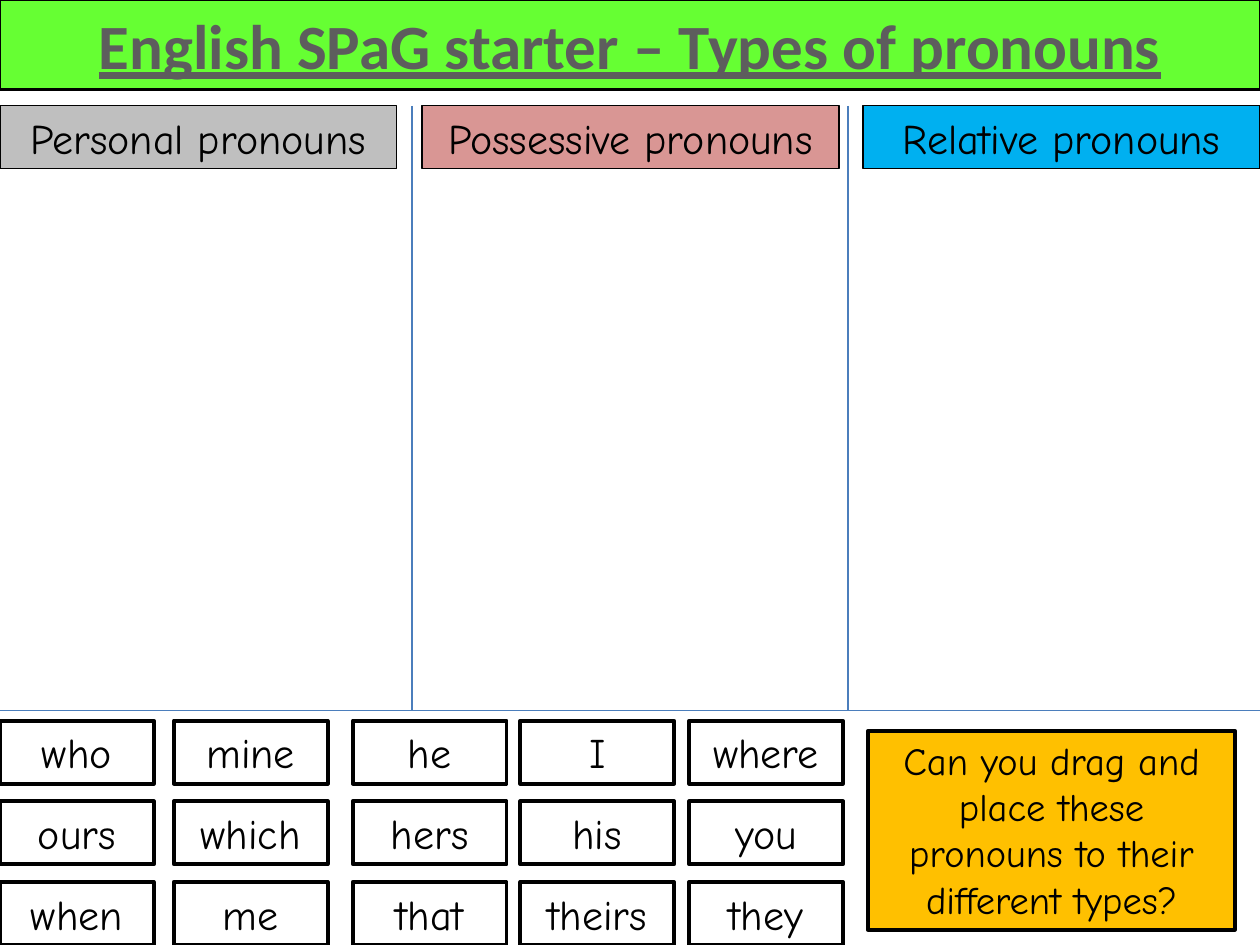
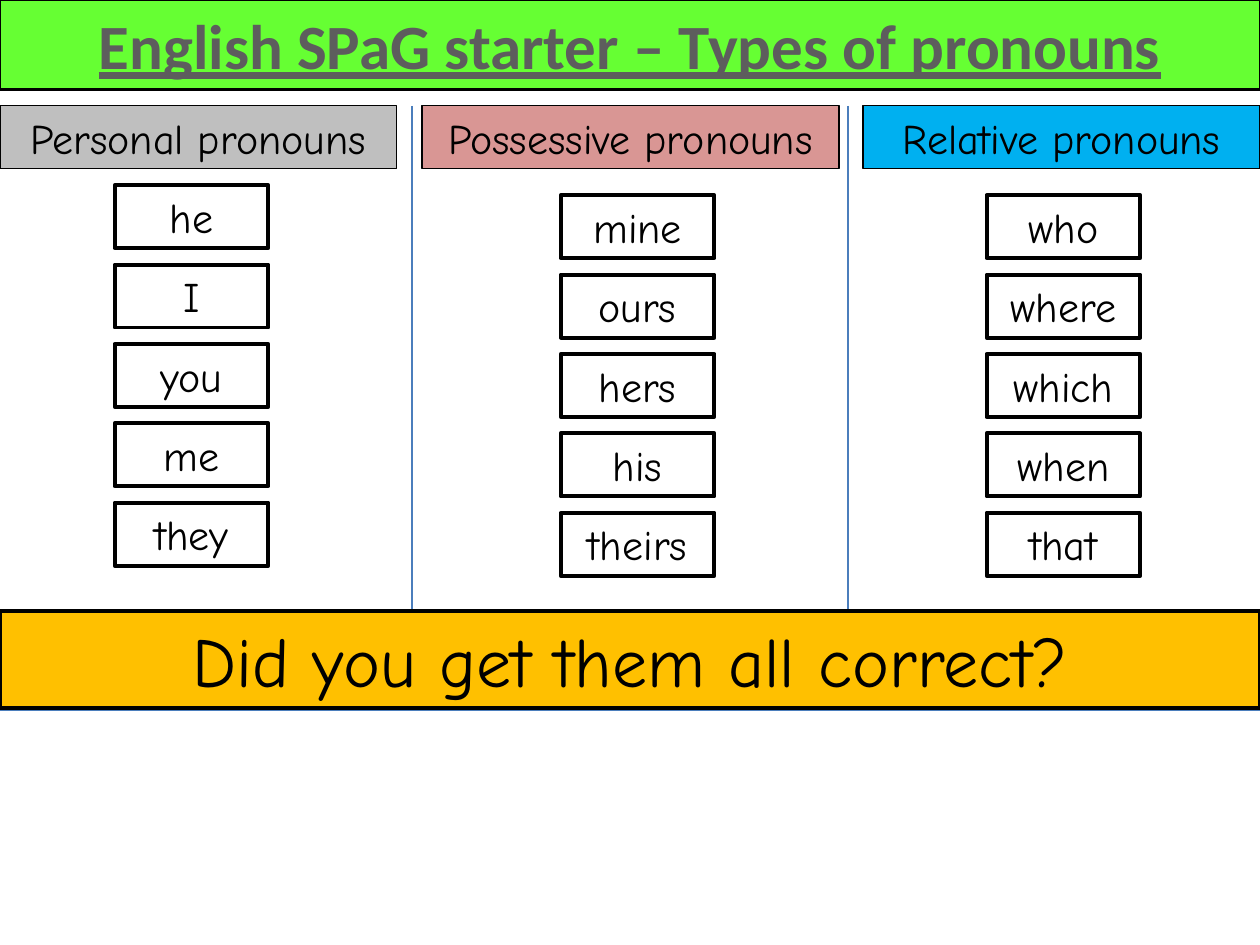
from dataclasses import dataclass
from typing import Optional

from lxml import etree
from pptx import Presentation
from pptx.dml.color import RGBColor
from pptx.enum import shapes, text
from pptx.oxml import ns
from pptx.slide import Slide
from pptx.util import Inches, Pt

BLACK = RGBColor(0x00, 0x00, 0x00)
TITLE_GREY = RGBColor(0x5D, 0x5D, 0x5D)
TITLE_GREEN = RGBColor(0x66, 0xFF, 0x33)
PERSONAL_GREY = RGBColor(0xBF, 0xBF, 0xBF)
POSSESSIVE_PINK = RGBColor(0xD9, 0x96, 0x94)
RELATIVE_BLUE = RGBColor(0x00, 0xB0, 0xF0)
PROMPT_ORANGE = RGBColor(0xFF, 0xC0, 0x00)
DIVIDER_BLUE = RGBColor(0x4B, 0x7E, 0xBC)

TITLE_FONT = "Calibri"
BODY_FONT = "Comic Neue"

SLIDE_WIDTH, SLIDE_HEIGHT = 10, 7.5
HEADING_TOP, DIVIDER_BOTTOM = 0.84, 5.64
CARD_WIDTH, CARD_HEIGHT = 1.22, 0.5
CARD_BORDER = 2.25


@dataclass(frozen=True)
class Box:
    words: str
    left: float
    top: float
    width: float
    height: float
    fill: Optional[RGBColor] = None
    border: float = CARD_BORDER
    size: float = 24
    font: str = BODY_FONT
    color: RGBColor = BLACK
    title: bool = False


@dataclass(frozen=True)
class Divider:
    x1: float
    y1: float
    x2: float
    y2: float


@dataclass(frozen=True)
class AnswerColumn:
    left: float
    top: float
    pronouns: tuple[str, ...]


TITLE = Box("English SPaG starter – Types of pronouns", 0, 0, SLIDE_WIDTH, 0.71,
            TITLE_GREEN, 1.5, 36, TITLE_FONT, TITLE_GREY, title=True)
HEADINGS = [
    Box(words, left, HEADING_TOP, width, 0.5, fill, 0.75)
    for words, left, width, fill in (
        ("Personal pronouns", 0, 3.15, PERSONAL_GREY),
        ("Possessive pronouns", 3.35, 3.31, POSSESSIVE_PINK),
        ("Relative pronouns", 6.85, 3.15, RELATIVE_BLUE),
    )
]
DIVIDERS = [Divider(x, HEADING_TOP, x, DIVIDER_BOTTOM) for x in (3.27, 6.73)]
DIVIDERS.append(Divider(0, DIVIDER_BOTTOM, SLIDE_WIDTH, DIVIDER_BOTTOM))

BANK_LEFTS = (0, 1.38, 2.8, 4.13, 5.47)
BANK_TOP, BANK_PITCH = 5.72, 0.64
WORD_BANK = (
    ("who", "mine", "he", "I", "where"),
    ("ours", "which", "hers", "his", "you"),
    ("when", "me", "that", "theirs", "they"),
)
TASK = Box("Can you drag and place these pronouns to their different types?",
           6.89, 5.8, 2.91, 1.58, PROMPT_ORANGE, size=22)

ANSWER_PITCH = 0.63
ANSWERS = (
    AnswerColumn(0.91, 1.47, ("he", "I", "you", "me", "they")),
    AnswerColumn(4.45, 1.55, ("mine", "ours", "hers", "his", "theirs")),
    AnswerColumn(7.83, 1.55, ("who", "where", "which", "when", "that")),
)
CHECK = Box("Did you get them all correct?", 0, 4.85, SLIDE_WIDTH, 0.77,
            PROMPT_ORANGE, size=40)


def draw_box(slide: Slide, box: Box) -> None:
    panel = slide.shapes.add_textbox(Inches(box.left), Inches(box.top),
                                     Inches(box.width), Inches(box.height))
    if box.fill is None:
        panel.fill.background()
    else:
        panel.fill.solid()
        panel.fill.fore_color.rgb = box.fill
    panel.line.color.rgb = BLACK
    panel.line.width = Pt(box.border)
    frame = panel.text_frame
    frame.text = box.words
    frame.word_wrap = True
    frame.auto_size = text.MSO_AUTO_SIZE.SHAPE_TO_FIT_TEXT
    paragraph = frame.paragraphs[0]
    paragraph.alignment = text.PP_ALIGN.CENTER
    font = paragraph.runs[0].font
    font.name = box.font
    font.size = Pt(box.size)
    font.color.rgb = box.color
    if box.title:
        font.bold = font.underline = True


def draw_divider(slide: Slide, divider: Divider) -> None:
    rule = slide.shapes.add_connector(
        shapes.MSO_CONNECTOR.STRAIGHT, Inches(divider.x1), Inches(divider.y1),
        Inches(divider.x2), Inches(divider.y2))
    rule.line.color.rgb = DIVIDER_BLUE
    rule.line.width = Pt(0.75)
    etree.SubElement(rule._element.spPr, ns.qn("a:effectLst"))


def draw_card(slide: Slide, pronoun: str, left: float, top: float) -> None:
    draw_box(slide, Box(pronoun, left, top, CARD_WIDTH, CARD_HEIGHT))


def add_pronoun_slide(deck: Presentation) -> Slide:
    slide = deck.slides.add_slide(deck.slide_layouts[6])
    for box in (TITLE, *HEADINGS):
        draw_box(slide, box)
    for divider in DIVIDERS:
        draw_divider(slide, divider)
    return slide


def build_sorting_slide(deck: Presentation) -> None:
    slide = add_pronoun_slide(deck)
    for row, pronouns in enumerate(WORD_BANK):
        for left, pronoun in zip(BANK_LEFTS, pronouns):
            draw_card(slide, pronoun, left, BANK_TOP + row * BANK_PITCH)
    draw_box(slide, TASK)


def build_answer_slide(deck: Presentation) -> None:
    slide = add_pronoun_slide(deck)
    for column in ANSWERS:
        for row, pronoun in enumerate(column.pronouns):
            draw_card(slide, pronoun, column.left, column.top + row * ANSWER_PITCH)
    draw_box(slide, CHECK)


def main() -> None:
    deck = Presentation()
    deck.slide_width = Inches(SLIDE_WIDTH)
    deck.slide_height = Inches(SLIDE_HEIGHT)
    build_sorting_slide(deck)
    build_answer_slide(deck)
    deck.save("out.pptx")


if __name__ == "__main__":
    main()
